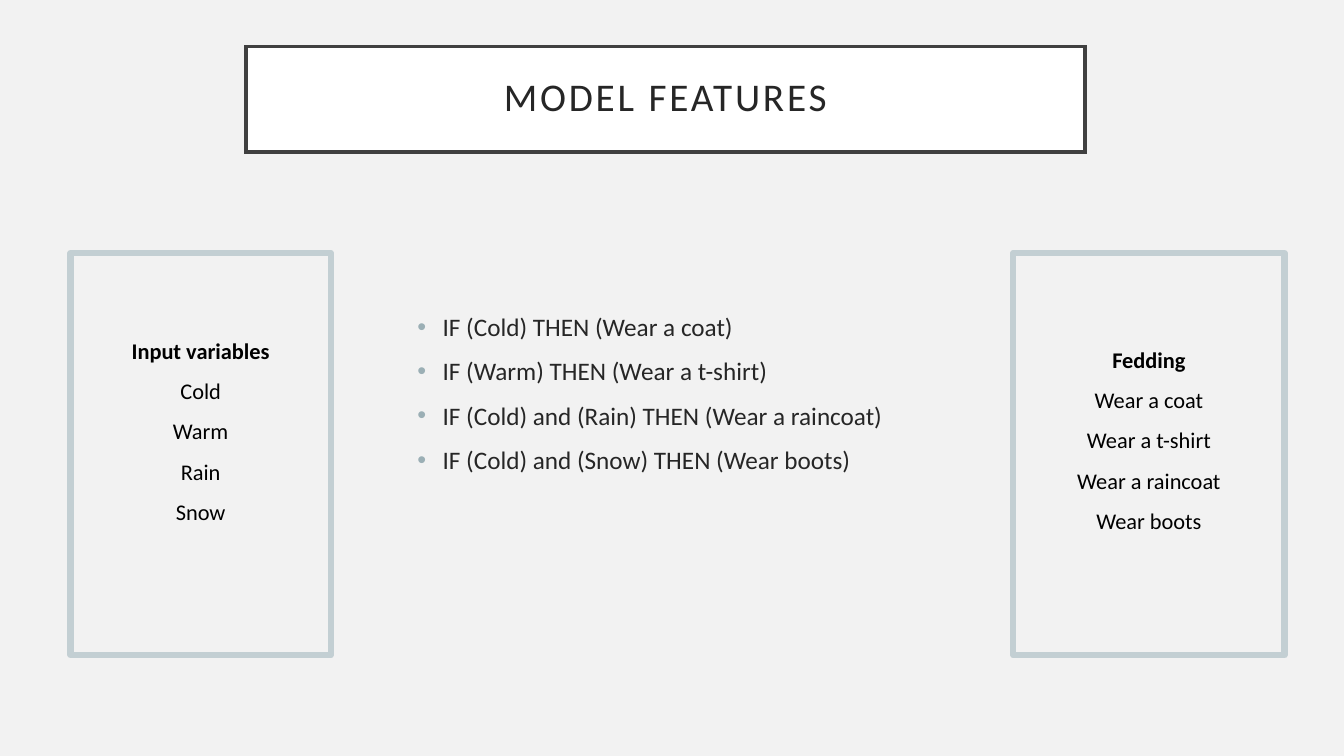
from dataclasses import dataclass

import lxml.etree
import pptx
import pptx.dml.color
import pptx.enum.shapes
import pptx.enum.text
import pptx.oxml.ns
import pptx.util

Inches = pptx.util.Inches
Pt = pptx.util.Pt
Align = pptx.enum.text.PP_ALIGN
Anchor = pptx.enum.text.MSO_ANCHOR

FONT = "Calibri"
COLORS = {
    "back": "F2F2F2",
    "white": "FFFFFF",
    "frame": "404040",
    "text": "262626",
    "black": "000000",
    "bullet": "9BAFB5",
    "panel": "C3CFD3",
}
RULES = [
    "IF (Cold) THEN (Wear a coat)",
    "IF (Warm) THEN (Wear a t-shirt)",
    "IF (Cold) and (Rain) THEN (Wear a raincoat)",
    "IF (Cold) and (Snow) THEN (Wear boots)",
]


@dataclass
class Panel:
    left: float
    width: float
    inset: float  # gap above the heading
    head: str
    items: list[str]


PANELS = [
    Panel(0.7, 2.58, 0.7, "Input variables", ["Cold", "Warm", "Rain", "Snow"]),
    Panel(10.05, 2.69, 0.79, "Fedding",
          ["Wear a coat", "Wear a t-shirt", "Wear a raincoat", "Wear boots"]),
]


def color(name: str) -> pptx.dml.color.RGBColor:
    return pptx.dml.color.RGBColor.from_string(COLORS[name])


def place(shape, left: float, top: float, width: float, height: float) -> None:
    shape.left, shape.top = Inches(left), Inches(top)
    shape.width, shape.height = Inches(width), Inches(height)


def outline(shape, name: str, width: float) -> None:
    shape.line.color.rgb = color(name)
    shape.line.width = Pt(width)


def setup(frame, anchor, inset: float) -> None:
    """Fix wrapping, anchor and side margins of a text frame."""
    frame.word_wrap = True
    frame.auto_size = pptx.enum.text.MSO_AUTO_SIZE.NONE
    frame.vertical_anchor = anchor
    frame.margin_left = frame.margin_right = Inches(inset)


def add_lines(frame, lines: list[str], size: float, name: str) -> list:
    """Write one paragraph per line and return the paragraphs."""
    for index, line in enumerate(lines):
        para = frame.add_paragraph() if index else frame.paragraphs[0]
        run = para.add_run()
        run.text = line
        run.font.name, run.font.size = FONT, Pt(size)
        run.font.bold = False
        run.font.color.rgb = color(name)
    return list(frame.paragraphs)


def add_bullet(para) -> None:
    props = para._p.get_or_add_pPr()
    props.set("marL", str(Inches(0.25)))
    props.set("indent", str(Inches(-0.25)))
    qn = pptx.oxml.ns.qn
    tint = lxml.etree.SubElement(props, qn("a:buClr"))
    lxml.etree.SubElement(tint, qn("a:srgbClr"), val=COLORS["bullet"])
    lxml.etree.SubElement(props, qn("a:buFont"), typeface="Arial")
    lxml.etree.SubElement(props, qn("a:buChar"), char="•")


def draw_title(title) -> None:
    place(title, 2.44, 0.46, 8.32, 1.05)
    title.fill.solid()
    title.fill.fore_color.rgb = color("white")
    outline(title, "frame", 2.5)
    lxml.etree.SubElement(title.line._get_or_add_ln(),
                          pptx.oxml.ns.qn("a:miter"), lim="800000")
    frame = title.text_frame
    setup(frame, Anchor.MIDDLE, 0.2)
    frame.margin_top = frame.margin_bottom = Inches(0.2)
    para = add_lines(frame, ["MODEL FEATURES"], 28, "text")[0]
    para.alignment = Align.CENTER
    para.line_spacing = 0.9
    para.runs[0].font._element.set("spc", "200")


def draw_rules(body) -> None:
    place(body, 4.04, 3.04, 5.25, 2.44)
    setup(body.text_frame, Anchor.TOP, 0.1)
    for para in add_lines(body.text_frame, RULES, 18, "text"):
        para.alignment = Align.LEFT
        para.space_before = Pt(10)
        add_bullet(para)


def draw_panel(slide, panel: Panel) -> None:
    box = slide.shapes.add_shape(
        pptx.enum.shapes.MSO_SHAPE.RECTANGLE, Inches(panel.left), Inches(2.51),
        Inches(panel.width), Inches(3.99))
    box.shadow.inherit = False
    box.fill.background()
    outline(box, "panel", 4.5)
    frame = box.text_frame
    setup(frame, Anchor.TOP, 0.1)
    frame.margin_top = Inches(panel.inset)
    paras = add_lines(frame, [panel.head, *panel.items], 16, "black")
    for para in paras:
        para.alignment = Align.CENTER
        para.line_spacing = 1.5
    paras[0].runs[0].font.bold = True


def main() -> None:
    deck = pptx.Presentation()
    deck.slide_width, deck.slide_height = Inches(13.33), Inches(7.5)
    slide = deck.slides.add_slide(deck.slide_layouts[1])
    slide.background.fill.solid()
    slide.background.fill.fore_color.rgb = color("back")
    draw_title(slide.shapes.title)
    draw_rules(slide.placeholders[1])
    for panel in PANELS:
        draw_panel(slide, panel)
    deck.save("out.pptx")


if __name__ == "__main__":
    main()
